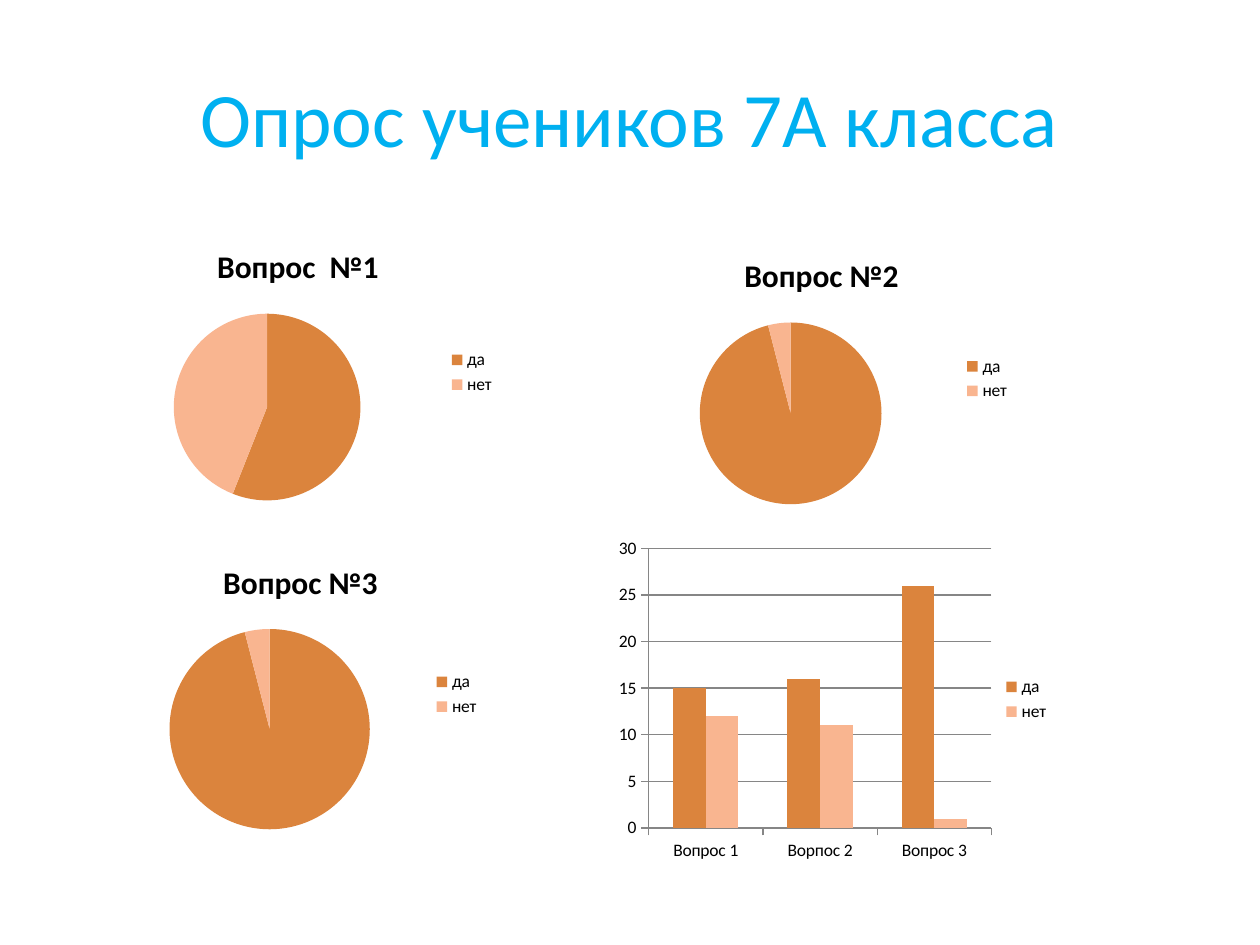
from pptx import Presentation
from pptx.chart.data import CategoryChartData
from pptx.dml.color import RGBColor
from pptx.enum.chart import XL_CHART_TYPE, XL_LEGEND_POSITION, XL_TICK_MARK
from pptx.enum.text import MSO_ANCHOR, PP_ALIGN
from pptx.util import Inches, Pt

PIE = XL_CHART_TYPE.PIE
COLUMNS = XL_CHART_TYPE.COLUMN_CLUSTERED
LEGEND_RIGHT = XL_LEGEND_POSITION.RIGHT
TICK_OUTSIDE = XL_TICK_MARK.OUTSIDE
TICK_NONE = XL_TICK_MARK.NONE
MIDDLE = MSO_ANCHOR.MIDDLE
CENTER = PP_ALIGN.CENTER

FONT = "Calibri"
COLORS = {
    "title": "00B0F0",
    "text": "000000",
    "yes": "DB843D",
    "no": "F9B590",
    "axis": "868686",
}
ANSWERS = {"да": "yes", "нет": "no"}

# Title, box (left, top, width, height), percentages for each answer
PIES = [
    ("Вопрос  №1", (0.7, 1.8, 3.33, 2.31), (56, 44)),
    ("Вопрос №2", (4.92, 1.87, 3.2, 2.27), (96, 4)),
    ("Вопрос №3", (0.86, 4.3, 3.05, 2.42), (96, 4)),
]
QUESTIONS = ["Вопрос 1", "Ворпос 2", "Вопрос 3"]
COUNTS = {"да": (15, 16, 26), "нет": (12, 11, 1)}
COLUMNS_BOX = (4.84, 4.22, 3.59, 2.66)


def rgb(name):
    return RGBColor.from_string(COLORS[name])


def format_font(font, size, color="text", bold=False):
    values = {"name": FONT, "size": Pt(size), "bold": bold}
    for name, value in values.items():
        setattr(font, name, value)
    font.color.rgb = rgb(color)


def paint(part, color):
    part.format.fill.solid()
    part.format.fill.fore_color.rgb = rgb(color)


def draw_line(line):
    line.color.rgb = rgb("axis")
    line.width = Pt(0.75)


def add_title(page, text):
    box = page.shapes.add_textbox(Inches(0.5), Inches(0.3), Inches(9), Inches(1.25))
    frame = box.text_frame
    frame.word_wrap = True
    frame.vertical_anchor = MIDDLE
    para = frame.paragraphs[0]
    para.alignment = CENTER
    span = para.add_run()
    span.text = text
    format_font(span.font, 44, "title")


def add_chart(page, kind, box, categories, series):
    data = CategoryChartData()
    data.categories = categories
    for name, values in series.items():
        data.add_series(name, values)
    chart = page.shapes.add_chart(kind, *map(Inches, box), data).chart
    format_font(chart.font, 10)
    chart.has_title = False
    chart.has_legend = True
    chart.legend.position = LEGEND_RIGHT
    chart.legend.include_in_layout = False
    return chart


def add_pie(page, title, box, shares):
    chart = add_chart(page, PIE, box, list(ANSWERS), {"Series 1": shares})
    chart.has_title = True
    para = chart.chart_title.text_frame.paragraphs[0]
    span = para.add_run()
    span.text = title
    format_font(span.font, 18, bold=True)
    points = chart.plots[0].series[0].points
    for index, color in enumerate(ANSWERS.values()):
        paint(points[index], color)


def add_columns(page):
    chart = add_chart(page, COLUMNS, COLUMNS_BOX, QUESTIONS, COUNTS)
    plot = chart.plots[0]
    plot.gap_width = 150
    plot.vary_by_categories = False
    for series in plot.series:
        paint(series, ANSWERS[series.name])
    for axis in (chart.category_axis, chart.value_axis):
        axis.major_tick_mark = TICK_OUTSIDE
        axis.minor_tick_mark = TICK_NONE
        draw_line(axis.format.line)
    chart.value_axis.has_major_gridlines = True
    draw_line(chart.value_axis.major_gridlines.format.line)


def main():
    deck = Presentation()
    deck.slide_width, deck.slide_height = Inches(10), Inches(7.5)
    page = deck.slides.add_slide(deck.slide_layouts[6])

    # Heading
    add_title(page, "Опрос учеников 7А класса")

    # One pie per question
    for title, box, shares in PIES:
        add_pie(page, title, box, shares)

    # Summary of all questions
    add_columns(page)

    deck.save("out.pptx")


if __name__ == "__main__":
    main()
